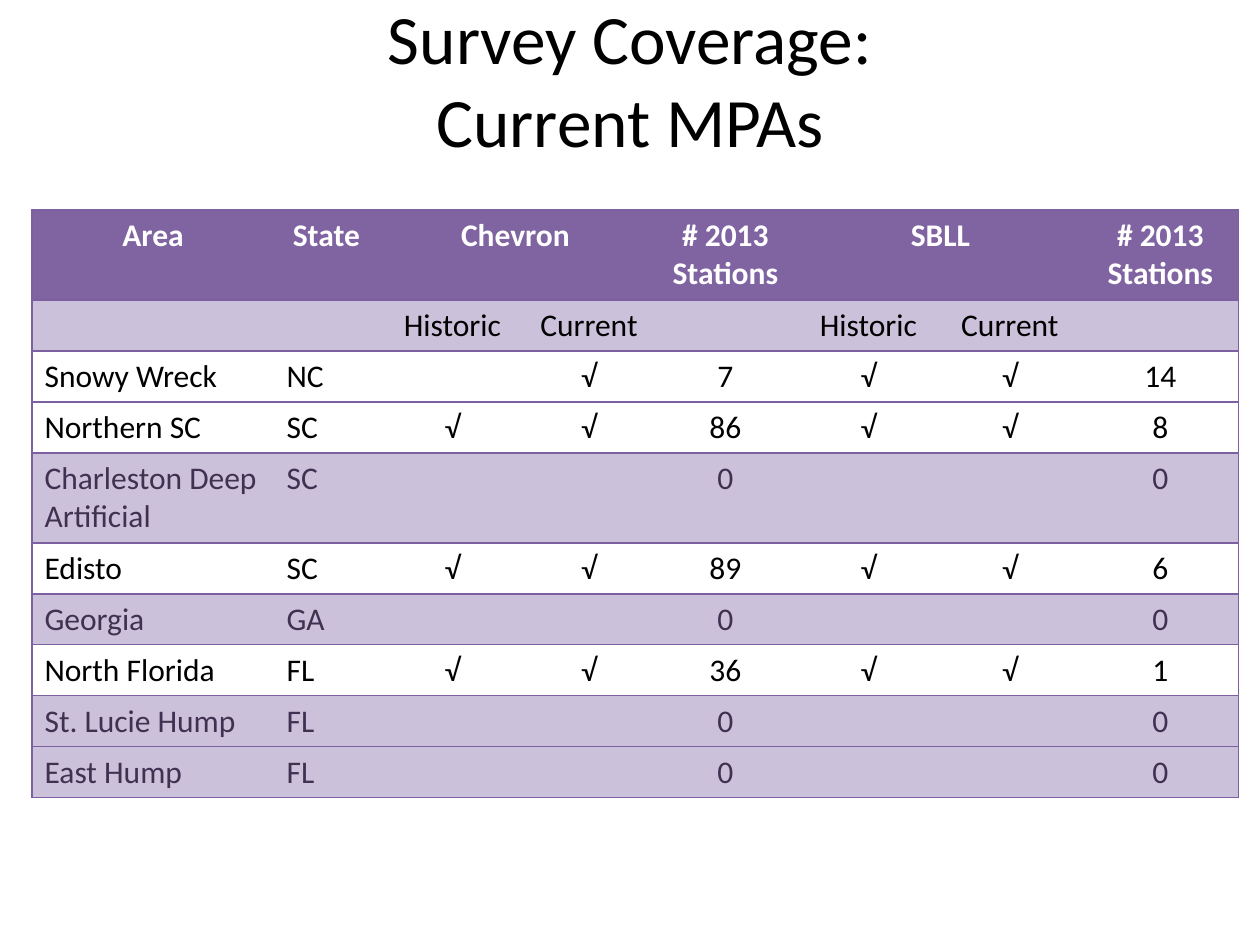
from lxml import etree
from pptx import Presentation
from pptx import util as u
from pptx.dml import color
from pptx.enum import text
from pptx.oxml import ns

PX_PER_INCH = 126
FONT = "Calibri"
BLACK, WHITE = "000000", "FFFFFF"
HEADER_FILL, UNSAMPLED_FILL = "8064A2", "CCC1DA"
UNSAMPLED_TEXT, BORDER = "403152", "7D60A0"
LEFT, CENTER = text.PP_ALIGN.LEFT, text.PP_ALIGN.CENTER

COLUMN_WIDTHS = [242, 105, 147, 126, 147, 139, 144, 157]
ROW_HEIGHT, TALL_ROW_HEIGHT = 51, 90
TALL_ROWS = (0, 4)
HEADER_SPANS = ((2, 3), (5, 6))
ROWS = [
    ["Area", "State", "Chevron", "", "# 2013 Stations", "SBLL", "", "# 2013 Stations"],
    ["", "", "Historic", "Current", "", "Historic", "Current", ""],
    ["Snowy Wreck", "NC", "", "√", "7", "√", "√", "14"],
    ["Northern SC", "SC", "√", "√", "86", "√", "√", "8"],
    ["Charleston Deep Artificial", "SC", "", "", "0", "", "", "0"],
    ["Edisto", "SC", "√", "√", "89", "√", "√", "6"],
    ["Georgia", "GA", "", "", "0", "", "", "0"],
    ["North Florida", "FL", "√", "√", "36", "√", "√", "1"],
    ["St. Lucie Hump", "FL", "", "", "0", "", "", "0"],
    ["East Hump", "FL", "", "", "0", "", "", "0"],
]


def px(length):
    return u.Inches(length / PX_PER_INCH)


def rgb(value):
    return color.RGBColor.from_string(value)


def write(frame, words, size=18, fill=BLACK, bold=False, align=CENTER):
    paragraph = frame.paragraphs[0]
    paragraph.alignment = align
    paragraph.font.size = u.Pt(size)
    for index, line in enumerate(words.split("\n")):
        if index:
            paragraph.add_line_break()
        if line:
            run = paragraph.add_run()
            run.text = line
            run.font.name = FONT
            run.font.size = u.Pt(size)
            run.font.bold = bold
            run.font.color.rgb = rgb(fill)


def set_borders(cell, visible_sides):
    properties = cell._tc.get_or_add_tcPr()
    for side in "LRTB":
        line = etree.SubElement(properties, ns.qn(f"a:ln{side}"), w=str(u.Pt(0.75)))
        if side in visible_sides:
            fill = etree.SubElement(line, ns.qn("a:solidFill"))
            etree.SubElement(fill, ns.qn("a:srgbClr"), val=BORDER)
        else:
            etree.SubElement(line, ns.qn("a:noFill"))


def row_colors(index, row):
    if index == 0:
        return HEADER_FILL, WHITE
    if index == 1:
        return UNSAMPLED_FILL, BLACK
    if row[-1] == "0":
        return UNSAMPLED_FILL, UNSAMPLED_TEXT
    return None, BLACK


def add_title(slide, words):
    box = slide.shapes.add_textbox(px(63), px(0), px(1134), px(157))
    frame = box.text_frame
    frame.word_wrap = True
    frame.vertical_anchor = text.MSO_ANCHOR.MIDDLE
    write(frame, words, size=39.6)


def add_coverage_table(slide):
    heights = [TALL_ROW_HEIGHT if i in TALL_ROWS else ROW_HEIGHT for i in range(len(ROWS))]
    table = slide.shapes.add_table(
        len(ROWS), len(COLUMN_WIDTHS), px(32), px(210),
        px(sum(COLUMN_WIDTHS)), px(sum(heights))).table
    table.first_row = False
    table.horz_banding = False
    for column, width in zip(table.columns, COLUMN_WIDTHS):
        column.width = px(width)
    last = len(COLUMN_WIDTHS) - 1
    for r, row in enumerate(ROWS):
        table.rows[r].height = px(heights[r])
        fill, font_color = row_colors(r, row)
        for c, words in enumerate(row):
            cell = table.cell(r, c)
            set_borders(cell, "TB" + "L" * (c == 0) + "R" * (c == last))
            if fill:
                cell.fill.solid()
                cell.fill.fore_color.rgb = rgb(fill)
            else:
                cell.fill.background()
            align = LEFT if r > 1 and c < 2 else CENTER
            write(cell.text_frame, words, fill=font_color, bold=r == 0, align=align)
    for first, second in HEADER_SPANS:
        table.cell(0, first).merge(table.cell(0, second))


def main():
    presentation = Presentation()
    presentation.slide_width = px(1260)
    presentation.slide_height = px(945)
    slide = presentation.slides.add_slide(presentation.slide_layouts[6])
    add_title(slide, "Survey Coverage:\nCurrent MPAs")
    add_coverage_table(slide)
    presentation.save("out.pptx")


if __name__ == "__main__":
    main()
